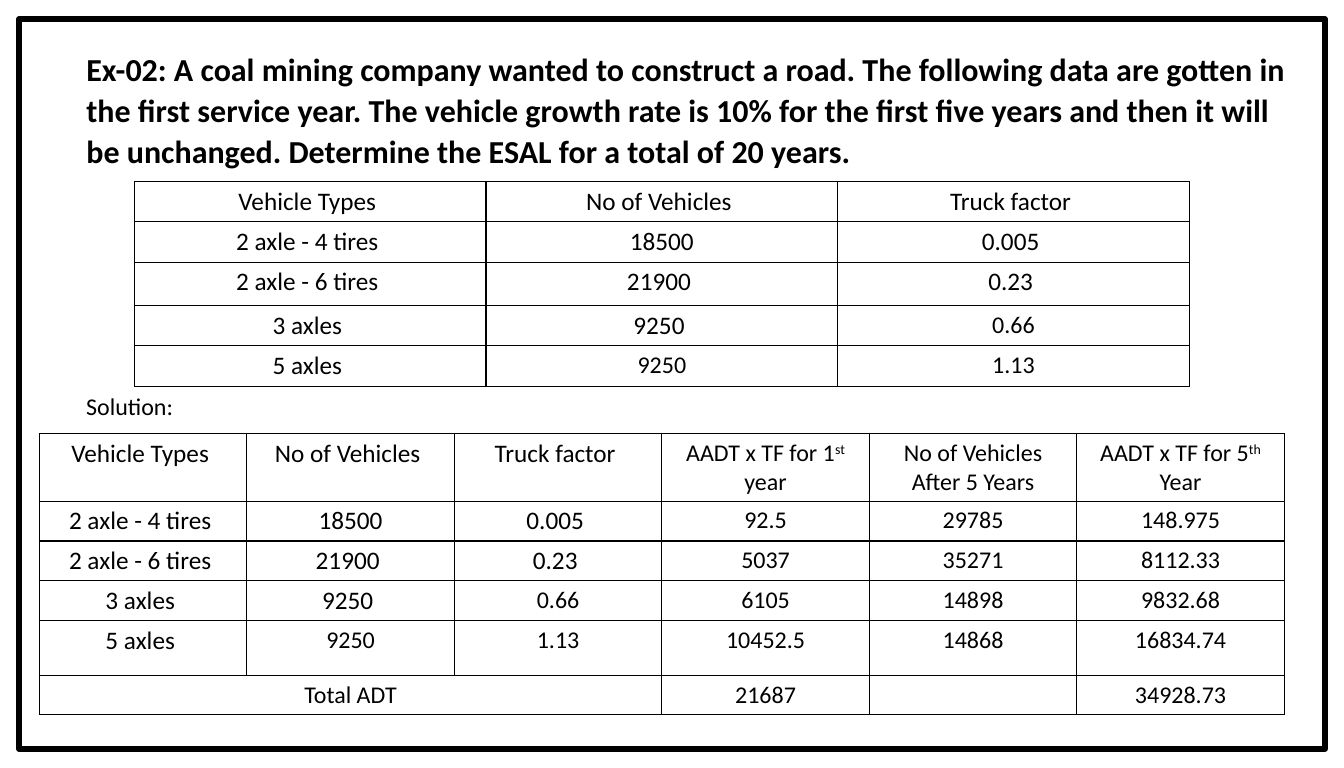
from lxml.etree import SubElement
from pptx import Presentation
from pptx.dml.color import RGBColor
from pptx.enum.shapes import MSO_SHAPE
from pptx.enum.text import MSO_ANCHOR, MSO_AUTO_SIZE, PP_ALIGN
from pptx.oxml.ns import qn
from pptx.util import Inches, Pt

# Content
QUESTION = (
    "Ex-02: A coal mining company wanted to construct a road. The following data are "
    "gotten in the first service year. The vehicle growth rate is 10% for the first five "
    "years and then it will be unchanged. Determine the ESAL for a total of 20 years."
)
VEHICLES = [
    ["Vehicle Types ", "No of Vehicles ", "Truck factor "],
    ["2 axle - 4 tires ", "18500", "0.005 "],
    ["2 axle - 6 tires ", "21900 ", "0.23 "],
    ["3 axles ", "9250 ", "0.66"],
    ["5 axles ", "9250", "1.13"],
]
# Text between carets is superscript
RESULTS = [
    ["AADT x TF for 1^st^ year", "No of Vehicles After 5 Years", "AADT x TF for 5^th^ Year"],
    ["92.5", "29785", "148.975"],
    ["5037", "35271", "8112.33"],
    ["6105", "14898", "9832.68"],
    ["10452.5", "14868", "16834.74"],
]
TOTALS = ["Total ADT", "", "", "21687", "", "34928.73"]
SOLUTION = [given + found for given, found in zip(VEHICLES, RESULTS)] + [TOTALS]

# Format
WIDTH, HEIGHT = 14, 8
MARGIN = 0.2
TEXT_LEFT = 0.8
ROW = 0.41
FONT, BLACK, WHITE = "Calibri", "000000", "FFFFFF"
SMALL, LARGE = 18, 18.9
SMALL_GIVEN = {"9250", "0.66", "1.13", "Total ADT"}


def color(value):
    return RGBColor.from_string(value)


def write(frame, text, size=SMALL, bold=False, align=PP_ALIGN.LEFT, spacing=1.0):
    frame.word_wrap = True
    para = frame.paragraphs[0]
    para.alignment = align
    para.line_spacing = spacing
    for index, part in enumerate(text.split("^")):
        if not part:
            continue
        span = para.add_run()
        span.text = part
        span.font.name = FONT
        span.font.size = Pt(size)
        span.font.bold = bold
        span.font.color.rgb = color(BLACK)
        if index % 2:
            span.font._element.set("baseline", "30000")


def add_borders(cell):
    properties = cell._tc.get_or_add_tcPr()
    for position, side in enumerate(("lnL", "lnR", "lnT", "lnB")):
        line = properties.makeelement(qn(f"a:{side}"), {"w": str(Pt(1))})
        fill = SubElement(line, qn("a:solidFill"))
        SubElement(fill, qn("a:srgbClr"), val=BLACK)
        properties.insert(position, line)


def add_grid(page, rows, left, top, width, heights):
    columns = len(rows[0])
    table = page.shapes.add_table(
        len(rows), columns, Inches(left), Inches(top), Inches(width), Inches(sum(heights))
    ).table
    for column in table.columns:
        column.width = Inches(width / columns)
    for row, height in zip(table.rows, heights):
        row.height = Inches(height)
    for r, values in enumerate(rows):
        for c, text in enumerate(values):
            cell = table.cell(r, c)
            cell.fill.solid()
            cell.fill.fore_color.rgb = color(WHITE)
            add_borders(cell)
            given = c < len(VEHICLES[0]) and text not in SMALL_GIVEN
            write(cell.text_frame, text, size=LARGE if given else SMALL, align=PP_ALIGN.CENTER)
    return table


deck = Presentation()
deck.slide_width, deck.slide_height = Inches(WIDTH), Inches(HEIGHT)
page = deck.slides.add_slide(deck.slide_layouts[5])

# Frame, placed behind the title
frame = page.shapes.add_shape(
    MSO_SHAPE.RECTANGLE, Inches(MARGIN), Inches(MARGIN),
    Inches(WIDTH - 2 * MARGIN), Inches(HEIGHT - 2 * MARGIN),
)
frame.shadow.inherit = False
frame.fill.solid()
frame.fill.fore_color.rgb = color(WHITE)
frame.line.color.rgb = color(BLACK)
frame.line.width = Pt(4.5)
page.shapes._spTree.insert(2, frame._element)

# Question
title = page.shapes.title
title.left, title.top = Inches(TEXT_LEFT), Inches(0.44)
title.width, title.height = Inches(12.69), Inches(1.4)
title.text_frame.auto_size = MSO_AUTO_SIZE.NONE
title.text_frame.vertical_anchor = MSO_ANCHOR.TOP
write(title.text_frame, QUESTION, size=24, bold=True, spacing=1.07)

# Given data
add_grid(page, VEHICLES, 1.4, 1.89, 10.99, [ROW, ROW, 0.45, ROW, ROW])

# Solution
box = page.shapes.add_textbox(Inches(TEXT_LEFT), Inches(4.03), Inches(2), Inches(ROW))
write(box.text_frame, "Solution:")
solution = add_grid(page, SOLUTION, 0.41, 4.52, 12.97, [0.7, ROW, ROW, ROW, 0.57, ROW])
last = len(SOLUTION) - 1
solution.cell(last, 0).merge(solution.cell(last, 2))

deck.save("out.pptx")
